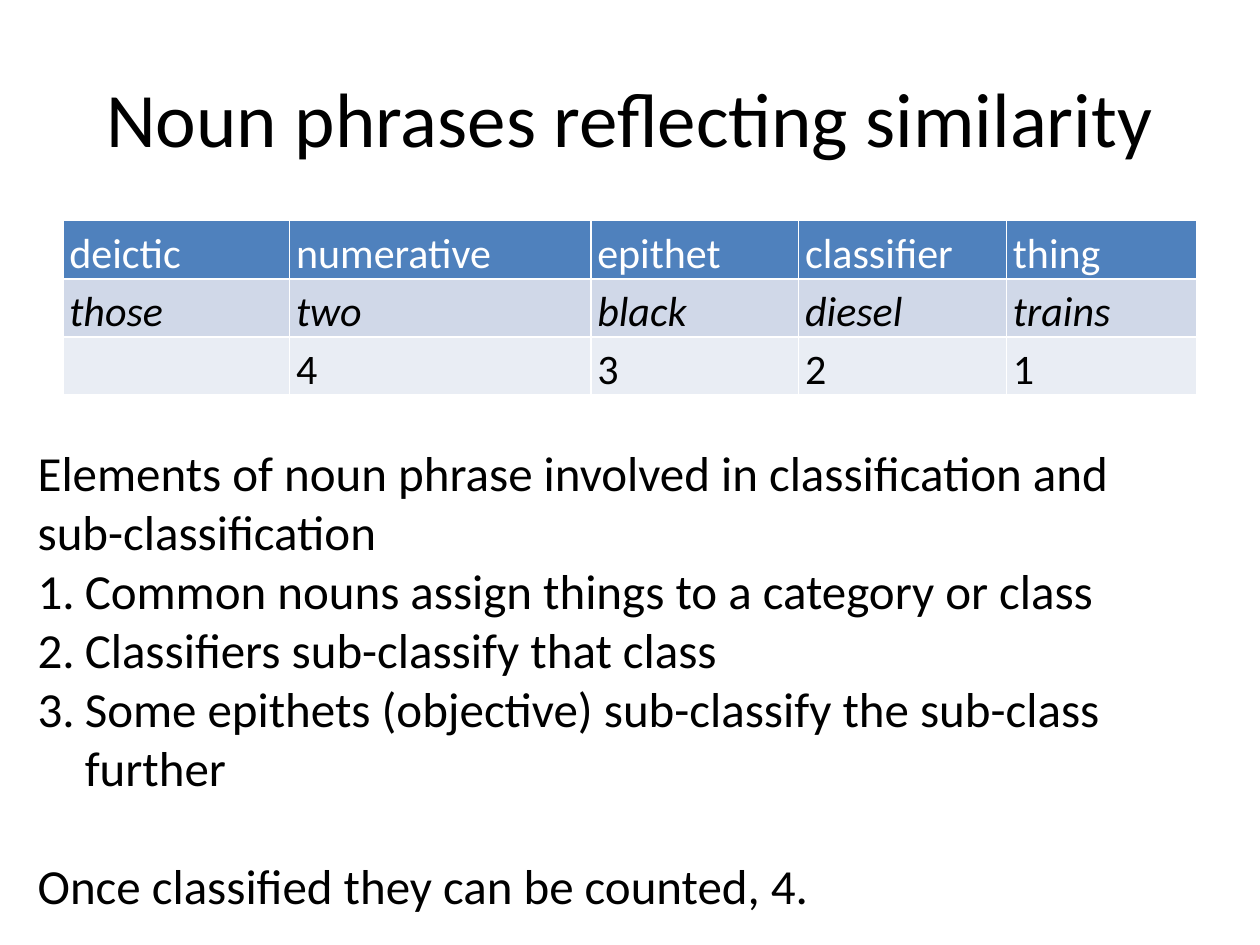
import pptx
import pptx.util
import pptx.dml.color
import pptx.enum.text
import lxml.etree

Cm, Pt = pptx.util.Cm, pptx.util.Pt
ANCHOR = pptx.enum.text.MSO_ANCHOR
ALIGN = pptx.enum.text.PP_ALIGN

# Content
TITLE = "Noun phrases reflecting similarity"
ROWS = [
    ("deictic", "numerative", "epithet", "classifier", "thing"),
    ("those", "two", "black", "diesel", "trains"),
    ("", "4", "3", "2", "1"),
]
INTRO = "Elements of noun phrase involved in classification and sub-classification"
STEPS = [
    "Common nouns assign things to a category or class",
    "Classifiers sub-classify that class",
    "Some epithets (objective) sub-classify the sub-class further",
]
CLOSE = "Once classified they can be counted, 4."

# Look
FONT = "Calibri"
HEX = {"ink": "000000", "white": "FFFFFF", "head": "4F81BD",
       "dark": "D0D8E8", "pale": "E9EDF4"}
LOOKS = [("head", "white", False), ("dark", "ink", True), ("pale", "ink", False)]
WIDTHS = [4.57, 6.07, 4.19, 4.19, 3.84]
LEFT, HIGH = 1.27, 1.17


def tint(name):
    return pptx.dml.color.RGBColor.from_string(HEX[name])


def style(par, size, color="ink", slant=False):
    for run in par.runs:
        font = run.font
        font.name, font.size = FONT, Pt(size)
        font.bold, font.italic = False, slant
        font.color.rgb = tint(color)


def number(par):
    """Give a paragraph a hanging automatic number."""
    props = par._p.get_or_add_pPr()
    props.set("marL", str(Cm(0.95)))
    props.set("indent", str(-Cm(0.95)))
    mark = lxml.etree.SubElement(props, pptx.oxml.ns.qn("a:buAutoNum"))
    mark.set("type", "arabicPeriod")


deck = pptx.Presentation()
deck.slide_width, deck.slide_height = Cm(25.4), Cm(19.05)
slide = deck.slides.add_slide(deck.slide_layouts[5])

# Title
title = slide.shapes.title
title.left, title.top = Cm(LEFT), Cm(0.76)
title.width, title.height = Cm(sum(WIDTHS)), Cm(3.18)
title.text_frame.text = TITLE
title.text_frame.vertical_anchor = ANCHOR.MIDDLE
title.text_frame.paragraphs[0].alignment = ALIGN.CENTER
style(title.text_frame.paragraphs[0], 44)

# Explanation below the table
box = slide.shapes.add_textbox(Cm(0.51), Cm(7.92), Cm(23.01), Cm(10.69))
frame = box.text_frame
frame.word_wrap = True
frame.vertical_anchor = ANCHOR.BOTTOM
frame.margin_bottom = Cm(0.18)
frame.text = "\n".join([INTRO, *STEPS, CLOSE])
for par in frame.paragraphs:
    style(par, 28)
for par in frame.paragraphs[1:-1]:
    number(par)
frame.paragraphs[-1].space_before = Pt(34)

# Table of phrase parts
table = slide.shapes.add_table(
    len(ROWS), len(WIDTHS), Cm(LEFT), Cm(4.45),
    Cm(sum(WIDTHS)), Cm(HIGH * len(ROWS))).table
for col, width in zip(table.columns, WIDTHS):
    col.width = Cm(width)
for row, words, (fill, color, slant) in zip(table.rows, ROWS, LOOKS):
    row.height = Cm(HIGH)
    for cell, word in zip(row.cells, words):
        cell.fill.solid()
        cell.fill.fore_color.rgb = tint(fill)
        cell.margin_left = cell.margin_right = Cm(0.13)
        cell.margin_top = cell.margin_bottom = 0
        cell.text_frame.text = word
        par = cell.text_frame.paragraphs[0]
        par.line_spacing = 1.15
        style(par, 24, color, slant)

deck.save("out.pptx")
